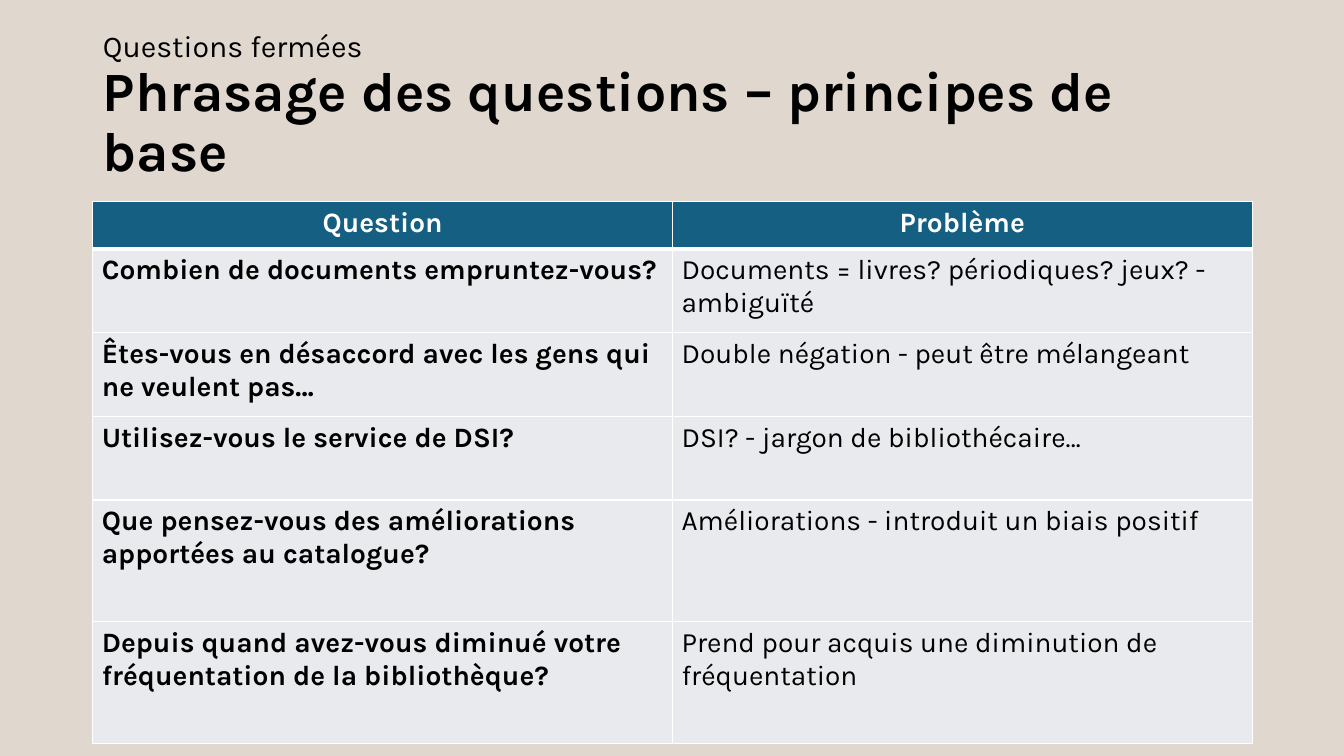
from dataclasses import dataclass

from lxml import etree
from pptx import Presentation
from pptx.dml.color import RGBColor
from pptx.enum.text import MSO_ANCHOR, MSO_AUTO_SIZE, PP_ALIGN
from pptx.oxml.ns import qn
from pptx.util import Inches, Pt

LEFT, CENTER = PP_ALIGN.LEFT, PP_ALIGN.CENTER
MIDDLE = MSO_ANCHOR.MIDDLE
NO_AUTOFIT = MSO_AUTO_SIZE.NONE
TITLE_ONLY = 5


@dataclass(frozen=True)
class Theme:
    font: str = "Karla"
    background: str = "E0D8CE"
    ink: str = "000000"
    header_fill: str = "156082"
    header_ink: str = "FFFFFF"
    body_fill: str = "E8EAED"
    rule: str = "FFFFFF"
    kicker_size: float = 21.6
    title_size: float = 39.6
    table_size: float = 20
    thin: float = 1
    thick: float = 3


HEADERS = ("Question", "Problème")
EXAMPLES = [
    ("Combien de documents empruntez-vous?",
     "Documents = livres? périodiques? jeux? - ambiguïté"),
    ("Êtes-vous en désaccord avec les gens qui ne veulent pas…",
     "Double négation - peut être mélangeant"),
    ("Utilisez-vous le service de DSI?",
     "DSI? - jargon de bibliothécaire…"),
    ("Que pensez-vous des améliorations apportées au catalogue?",
     "Améliorations - introduit un biais positif"),
    ("Depuis quand avez-vous diminué votre fréquentation de la bibliothèque?",
     "Prend pour acquis une diminution de fréquentation"),
]
ROW_HEIGHTS = (0.47, 0.83, 0.83, 0.83, 1.21, 1.21)


def apply(target, values):
    for name, value in values.items():
        setattr(target, name, value)


class SlideBuilder:
    def __init__(self, presentation, theme):
        self.theme = theme
        self.slide = presentation.slides.add_slide(
            presentation.slide_layouts[TITLE_ONLY])
        background = self.slide.background.fill
        background.solid()
        background.fore_color.rgb = RGBColor.from_string(theme.background)

    def run(self, paragraph, text, size, color, bold=False):
        run = paragraph.add_run()
        run.text = text
        apply(run.font, {"name": self.theme.font, "size": Pt(size), "bold": bold})
        run.font.color.rgb = RGBColor.from_string(color)

    def title(self, kicker, heading, left, top, width, height):
        theme = self.theme
        title = self.slide.shapes.title
        apply(title, {"left": Inches(left), "top": Inches(top),
                      "width": Inches(width), "height": Inches(height)})
        apply(title.text_frame, {"word_wrap": True, "vertical_anchor": MIDDLE,
                                 "auto_size": NO_AUTOFIT})
        paragraph = title.text_frame.paragraphs[0]
        apply(paragraph, {"alignment": LEFT, "line_spacing": 0.9})
        self.run(paragraph, kicker, theme.kicker_size, theme.ink)
        paragraph.add_line_break()
        # The break needs the kicker size, or it stretches the first line.
        line_break = paragraph._p.find(qn("a:br"))
        etree.SubElement(line_break, qn("a:rPr"), sz=str(round(theme.kicker_size * 100)))
        self.run(paragraph, heading, theme.title_size, theme.ink, bold=True)

    def borders(self, cell, top, bottom):
        thin = self.theme.thin
        properties = cell._tc.get_or_add_tcPr()
        widths = {"lnL": thin, "lnR": thin, "lnT": top, "lnB": bottom}
        for position, (side, width) in enumerate(widths.items()):
            line = etree.Element(qn(f"a:{side}"), w=str(Pt(width)))
            fill = etree.SubElement(line, qn("a:solidFill"))
            etree.SubElement(fill, qn("a:srgbClr"), val=self.theme.rule)
            properties.insert(position, line)

    def cell(self, cell, text, is_header, bold):
        theme = self.theme
        fill, ink, alignment = (
            (theme.header_fill, theme.header_ink, CENTER) if is_header
            else (theme.body_fill, theme.ink, LEFT))
        cell.fill.solid()
        cell.fill.fore_color.rgb = RGBColor.from_string(fill)
        apply(cell, {"margin_left": Inches(0.09), "margin_right": Inches(0.09),
                     "margin_top": Inches(0.05), "margin_bottom": Inches(0.05)})
        paragraph = cell.text_frame.paragraphs[0]
        paragraph.alignment = alignment
        self.run(paragraph, text, theme.table_size, ink, bold)

    def table(self, rows, row_heights, left, top, width):
        theme = self.theme
        table = self.slide.shapes.add_table(
            len(rows), len(rows[0]), Inches(left), Inches(top),
            Inches(width), Inches(sum(row_heights))).table
        for r, (texts, height) in enumerate(zip(rows, row_heights)):
            table.rows[r].height = Inches(height)
            for c, text in enumerate(texts):
                cell = table.cell(r, c)
                self.cell(cell, text, is_header=r == 0, bold=r == 0 or c == 0)
                self.borders(cell, top=theme.thick if r == 1 else theme.thin,
                             bottom=theme.thick if r == 0 else theme.thin)


def main():
    presentation = Presentation()
    apply(presentation, {"slide_width": Inches(13.33), "slide_height": Inches(7.5)})
    builder = SlideBuilder(presentation, Theme())
    builder.title("Questions fermées", "Phrasage des questions – principes de base",
                  0.92, 0.34, 11.5, 1.45)
    builder.table([HEADERS, *EXAMPLES], ROW_HEIGHTS, 0.92, 2, 11.5)
    presentation.save("out.pptx")


if __name__ == "__main__":
    main()
